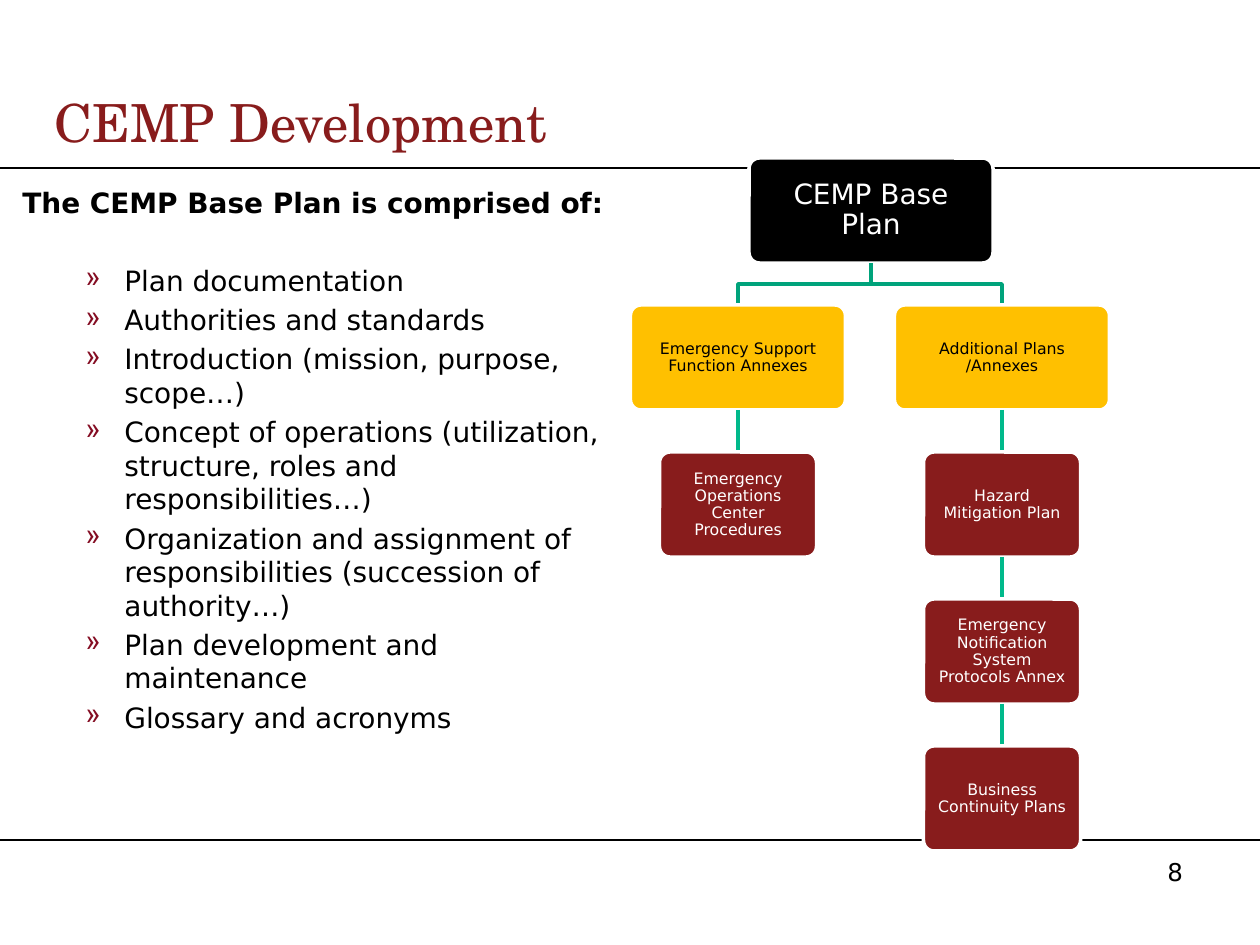
from dataclasses import dataclass

from lxml import etree
from pptx import Presentation
from pptx.dml.color import RGBColor
from pptx.enum.shapes import MSO_CONNECTOR, MSO_SHAPE
from pptx.enum.text import MSO_ANCHOR, PP_ALIGN
from pptx.oxml.ns import qn
from pptx.util import Emu, Pt

STRAIGHT = MSO_CONNECTOR.STRAIGHT
ROUNDED = MSO_SHAPE.ROUNDED_RECTANGLE
MIDDLE = MSO_ANCHOR.MIDDLE
CENTER = PP_ALIGN.CENTER

EMU_PER_PX = 914400 / 126
SLIDE_WIDTH, SLIDE_HEIGHT = 1260, 945
SANS, SERIF = "DejaVu Sans", "TeX Gyre Schola"
BLACK, WHITE, MAROON, GOLD = "000000", "FFFFFF", "881C1C", "FFC000"
BULLET_RED, TRUNK_GREEN, BRANCH_GREEN = "840C22", "00A37B", "00B98B"

CHART_TOP, ROW_STEP, BOX_HEIGHT = 158, 147, 105
ROOT_X, SUPPORT_X, PLANS_X = 871, 738, 1002

HEADING = "The CEMP Base Plan is comprised of:"
BULLETS = [
    "Plan documentation",
    "Authorities and standards",
    "Introduction (mission, purpose, scope…)",
    "Concept of operations (utilization, structure, roles and responsibilities…)",
    "Organization and assignment of responsibilities (succession of authority…)",
    "Plan development and maintenance",
    "Glossary and acronyms",
]


@dataclass(frozen=True)
class BoxStyle:
    width: int
    fill: str
    color: str
    size: int
    inset: int


@dataclass(frozen=True)
class PlanBox:
    text: str
    center: int
    row: int
    style: BoxStyle

    @property
    def top(self) -> int:
        return CHART_TOP + self.row * ROW_STEP

    @property
    def bottom(self) -> int:
        return self.top + BOX_HEIGHT


ROOT_STYLE = BoxStyle(244, BLACK, WHITE, 16, 12)
GROUP_STYLE = BoxStyle(215, GOLD, BLACK, 9, 8)
PLAN_STYLE = BoxStyle(157, MAROON, WHITE, 9, 8)

ROOT = PlanBox("CEMP Base Plan", ROOT_X, 0, ROOT_STYLE)
BRANCHES = [
    [
        PlanBox("Emergency Support Function Annexes", SUPPORT_X, 1, GROUP_STYLE),
        PlanBox("Emergency Operations Center Procedures", SUPPORT_X, 2, PLAN_STYLE),
    ],
    [
        PlanBox("Additional Plans /Annexes", PLANS_X, 1, GROUP_STYLE),
        PlanBox("Hazard Mitigation Plan", PLANS_X, 2, PLAN_STYLE),
        PlanBox("Emergency Notification System Protocols Annex", PLANS_X, 3, PLAN_STYLE),
        PlanBox("Business Continuity Plans", PLANS_X, 4, PLAN_STYLE),
    ],
]


def px(length: int) -> Emu:
    return Emu(round(length * EMU_PER_PX))


def rgb(color: str) -> RGBColor:
    return RGBColor.from_string(color)


def write(para, text: str, *, size: int, color: str = BLACK, font: str = SANS,
          bold: bool = False, before: float = 0) -> None:
    span = para.add_run()
    span.text = text
    span.font.size = Pt(size)
    span.font.name = font
    span.font.bold = bold
    span.font.color.rgb = rgb(color)
    if before:
        para.space_before = Pt(before)


def add_frame(page, left: int, top: int, width: int, height: int):
    frame = page.shapes.add_textbox(px(left), px(top), px(width), px(height)).text_frame
    frame.word_wrap = True
    return frame


def set_bullet(para) -> None:
    properties = para._p.get_or_add_pPr()
    properties.set("lvl", "1")
    properties.set("marL", str(px(102)))
    properties.set("indent", str(-px(39)))
    color = etree.SubElement(properties, qn("a:buClr"))
    etree.SubElement(color, qn("a:srgbClr"), val=BULLET_RED)
    etree.SubElement(properties, qn("a:buChar"), char="»")


def add_line(page, start: tuple[int, int], end: tuple[int, int],
             color: str, width: int) -> None:
    line = page.shapes.add_connector(STRAIGHT, *map(px, start + end))
    line.line.color.rgb = rgb(color)
    line.line.width = Pt(width)
    etree.SubElement(line._element.spPr, qn("a:effectLst"))


def add_elbow(page, parent: PlanBox, child: PlanBox) -> None:
    bend = (parent.bottom + child.top) // 2
    builder = page.shapes.build_freeform(parent.center, parent.bottom, scale=EMU_PER_PX)
    builder.add_line_segments(
        [(parent.center, bend), (child.center, bend), (child.center, child.top)],
        close=False,
    )
    elbow = builder.convert_to_shape()
    elbow.shadow.inherit = False
    elbow.fill.background()
    elbow.line.color.rgb = rgb(TRUNK_GREEN)
    elbow.line.width = Pt(2)


def add_plan_box(page, plan: PlanBox) -> None:
    style = plan.style
    box = page.shapes.add_shape(
        ROUNDED, px(plan.center) - px(style.width) // 2, px(plan.top),
        px(style.width), px(BOX_HEIGHT),
    )
    box.adjustments[0] = 0.1
    box.shadow.inherit = False
    box.fill.solid()
    box.fill.fore_color.rgb = rgb(style.fill)
    box.line.color.rgb = rgb(WHITE)
    box.line.width = Pt(2)
    frame = box.text_frame
    frame.word_wrap = True
    frame.vertical_anchor = MIDDLE
    frame.margin_left = frame.margin_right = px(style.inset)
    frame.margin_top = frame.margin_bottom = px(style.inset)
    para = frame.paragraphs[0]
    para.alignment = CENTER
    para.line_spacing = 0.9
    write(para, plan.text, size=style.size, color=style.color)


def add_plan_chart(page) -> None:
    add_plan_box(page, ROOT)
    for branch in BRANCHES:
        add_elbow(page, ROOT, branch[0])
        add_plan_box(page, branch[0])
        for parent, child in zip(branch, branch[1:]):
            add_line(page, (parent.center, parent.bottom), (child.center, child.top),
                     BRANCH_GREEN, 2)
            add_plan_box(page, child)


def add_contents(page) -> None:
    frame = add_frame(page, 10, 179, 609, 663)
    write(frame.paragraphs[0], HEADING, size=16, bold=True)
    for index, text in enumerate(BULLETS):
        para = frame.add_paragraph()
        set_bullet(para)
        write(para, text, size=16, before=3.2 if index else 25.6)


def main() -> None:
    deck = Presentation()
    deck.slide_width, deck.slide_height = px(SLIDE_WIDTH), px(SLIDE_HEIGHT)
    page = deck.slides.add_slide(deck.slide_layouts[6])
    for rule in (168, 840):
        add_line(page, (0, rule), (SLIDE_WIDTH, rule), BLACK, 1)
    write(add_frame(page, 1155, 851, 84, 43).paragraphs[0], "8", size=14)
    write(add_frame(page, 42, 84, 1218, 73).paragraphs[0], "CEMP Development",
          size=30, color=MAROON, font=SERIF)
    add_plan_chart(page)
    add_contents(page)
    deck.save("out.pptx")


if __name__ == "__main__":
    main()
